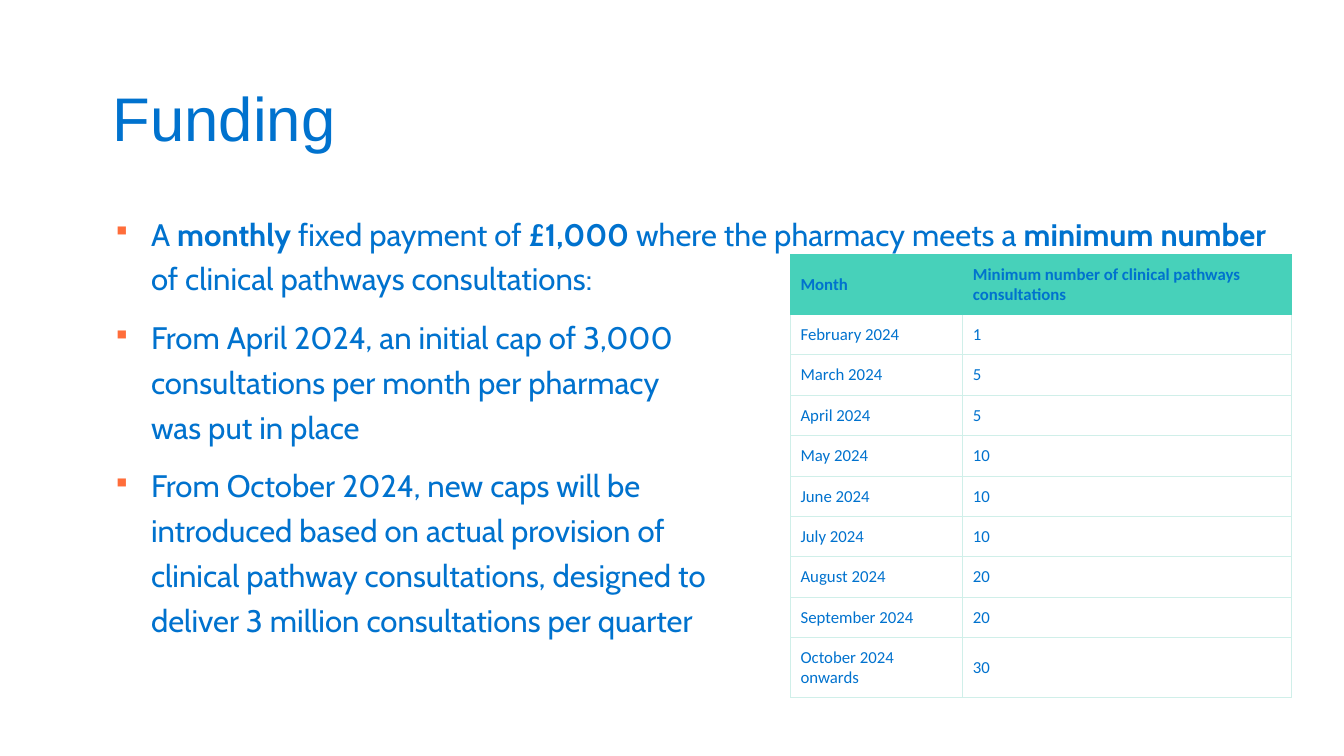
from lxml import etree
from pptx import Presentation
from pptx.dml.color import RGBColor
from pptx.enum import text
from pptx.oxml import ns
from pptx.util import Inches, Pt

BLUE = RGBColor(0x00, 0x72, 0xCE)
ORANGE = RGBColor(0xFF, 0x6D, 0x3A)
TEAL = RGBColor(0x47, 0xD1, 0xBA)
PALE_TEAL = RGBColor(0xD0, 0xEF, 0xE9)

POINTS = [
    [("A ", False), ("monthly", True), (" fixed payment of ", False),
     ("£1,000 ", True), ("where the pharmacy meets a ", False),
     ("minimum number ", True), ("of clinical pathways consultations:", False)],
    [("From April 2024, an initial cap of 3,000 \n"
      "consultations per month per pharmacy \n"
      "was put in place", False)],
    [("From October 2024, new caps will be \n"
      "introduced based on actual provision of \n"
      "clinical pathway consultations, designed to \n"
      "deliver 3 million consultations per quarter", False)],
]
MINIMUMS = [
    ("Month", "Minimum number of clinical pathways consultations"),
    ("February 2024", "1"),
    ("March 2024", "5"),
    ("April 2024", "5"),
    ("May 2024", "10"),
    ("June 2024", "10"),
    ("July 2024", "10"),
    ("August 2024", "20"),
    ("September 2024", "20"),
    ("October 2024 onwards", "30"),
]


def add_child(parent, tag, **attributes):
    child = etree.SubElement(parent, ns.qn(tag))
    for name, value in attributes.items():
        child.set(name, str(value))
    return child


def write(para, words, font, size, bold=False):
    """Add words to a paragraph, turning each newline into a line break."""
    for number, line in enumerate(words.split("\n")):
        if number:
            para.add_line_break()
        span = para.add_run()
        span.text = line
        span.font.name = font
        span.font.size = Pt(size)
        span.font.bold = bold
        span.font.color.rgb = BLUE


def add_text_frame(page, left, top, width, height, anchor):
    box = page.shapes.add_textbox(Inches(left), Inches(top), Inches(width), Inches(height))
    frame = box.text_frame
    frame.word_wrap = True
    frame.vertical_anchor = anchor
    return frame


def add_title(page, left, top, width, height):
    frame = add_text_frame(page, left, top, width, height, text.MSO_ANCHOR.MIDDLE)
    para = frame.paragraphs[0]
    para.line_spacing = 1.1
    write(para, "Funding", "Arial", 44)


def add_bullet(para):
    properties = para._p.get_or_add_pPr()
    properties.set("marL", str(Inches(0.38)))
    properties.set("indent", str(-Inches(0.38)))
    add_child(add_child(properties, "a:buClr"), "a:srgbClr", val=ORANGE)
    add_child(properties, "a:buSzPct", val=80000)
    add_child(properties, "a:buChar", char="▪")


def add_points(page, left, top, width, height):
    frame = add_text_frame(page, left, top, width, height, text.MSO_ANCHOR.TOP)
    for number, point in enumerate(POINTS):
        para = frame.add_paragraph() if number else frame.paragraphs[0]
        add_bullet(para)
        para.line_spacing = 1.2
        if number:
            para.space_before = Pt(10)
        for words, bold in point:
            write(para, words, "Cabin", 22.2, bold)


def set_borders(cell, row):
    """Rule the body cells and leave the header without lines."""
    properties = cell._tc.get_or_add_tcPr()
    for side in ("L", "R", "T", "B"):
        line = add_child(properties, f"a:ln{side}", w=Pt(0.75))
        if row == 0 or (row == 1 and side == "T"):
            add_child(line, "a:noFill")
        else:
            add_child(add_child(line, "a:solidFill"), "a:srgbClr", val=PALE_TEAL)


def add_minimums_table(page, left, top, width, height):
    header_height, month_width = 0.54, 1.71
    body_height = (height - header_height) / (len(MINIMUMS) - 1)
    table = page.shapes.add_table(len(MINIMUMS), 2, Inches(left), Inches(top),
                                  Inches(width), Inches(height)).table
    table.first_row = table.horz_banding = False
    table.columns[0].width = Inches(month_width)
    table.columns[1].width = Inches(width - month_width)
    for row, values in enumerate(MINIMUMS):
        is_header = row == 0
        table.rows[row].height = Inches(header_height if is_header else body_height)
        for column, value in enumerate(values):
            cell = table.cell(row, column)
            set_borders(cell, row)
            if is_header:
                cell.fill.solid()
                cell.fill.fore_color.rgb = TEAL
            else:
                cell.fill.background()
            cell.vertical_anchor = text.MSO_ANCHOR.MIDDLE
            cell.margin_left = cell.margin_right = Inches(0.1)
            cell.margin_top = cell.margin_bottom = Inches(0.1)
            write(cell.text_frame.paragraphs[0], value, "Calibri", 12, is_header)


def main():
    deck = Presentation()
    deck.slide_width = Inches(13.33)
    deck.slide_height = Inches(7.5)
    page = deck.slides.add_slide(deck.slide_layouts[6])
    add_title(page, 1.02, 0.4, 11.39, 1.45)
    add_points(page, 1.02, 2.01, 11.94, 4.42)
    add_minimums_table(page, 7.84, 2.52, 4.97, 3.78)
    deck.save("out.pptx")


if __name__ == "__main__":
    main()
